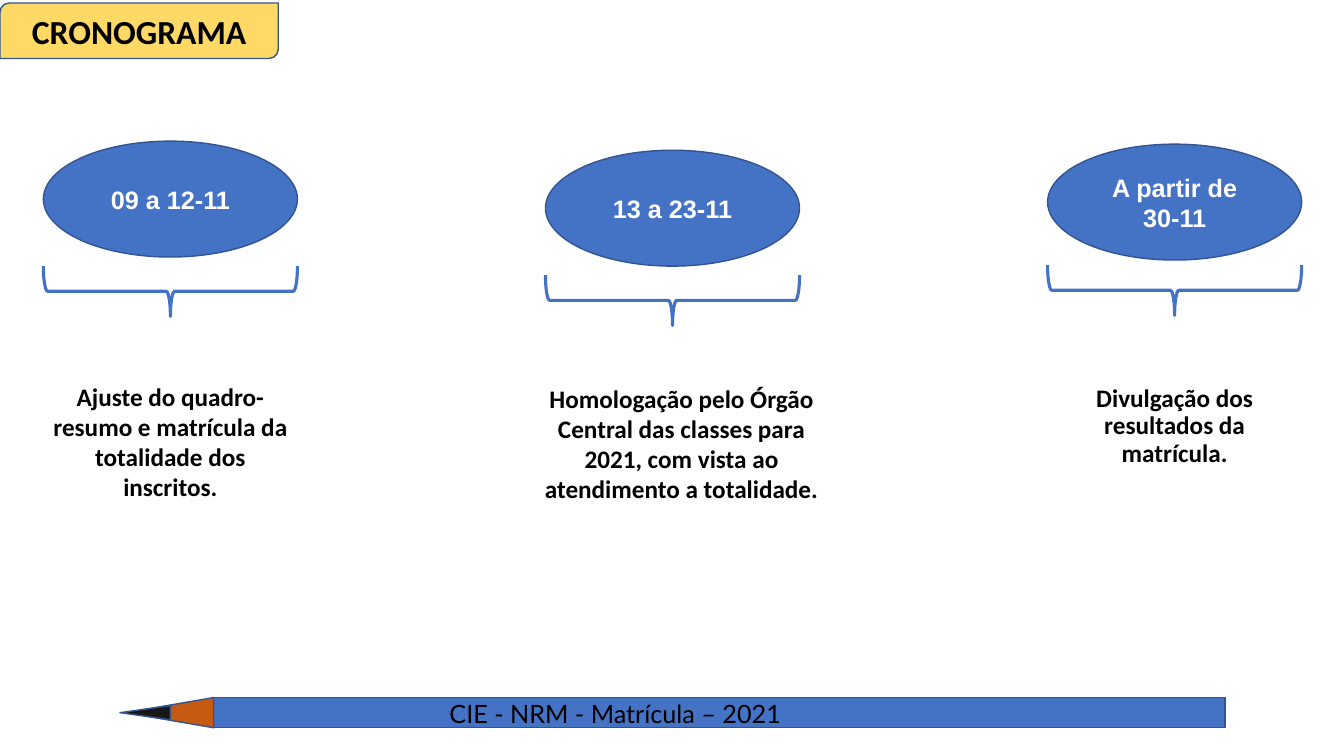
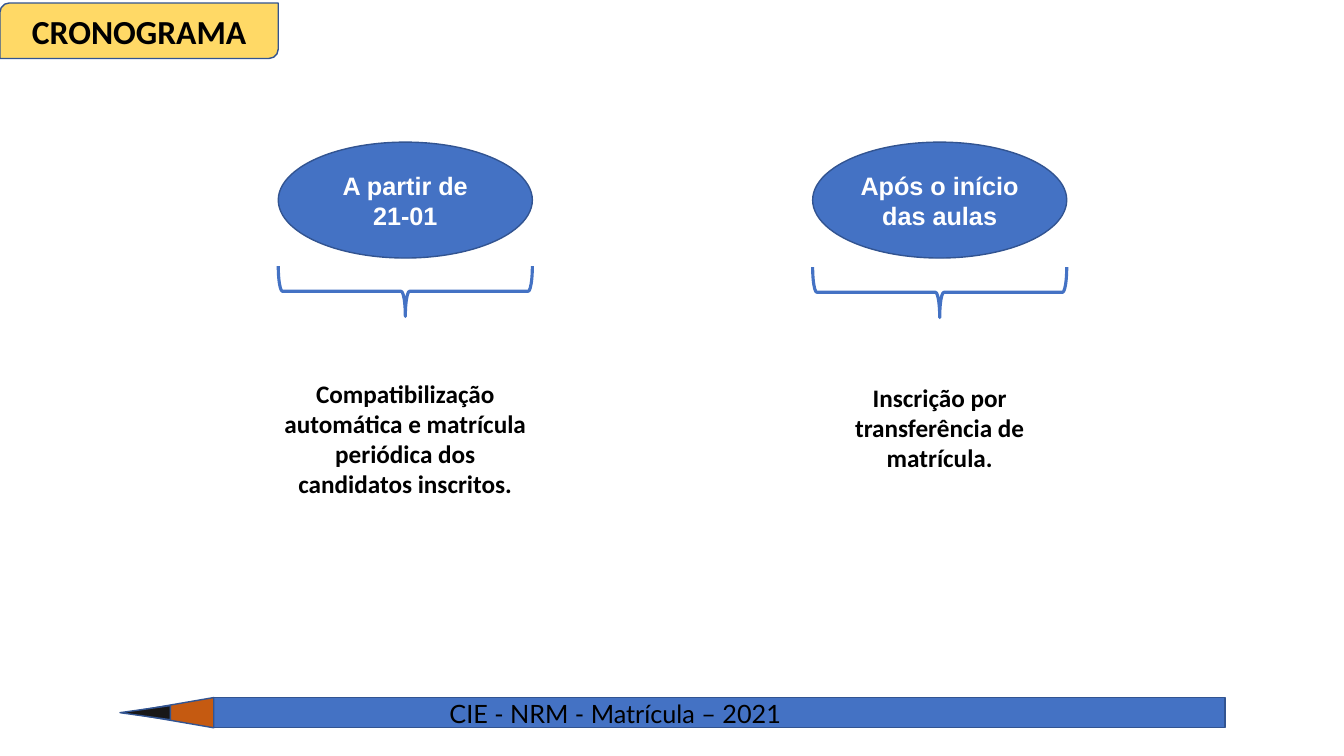
from pptx import Presentation
from pptx.dml.color import RGBColor
from pptx.enum.shapes import MSO_SHAPE
from pptx.enum.text import MSO_ANCHOR, PP_ALIGN
from pptx.util import Inches, Pt

BLUE, EDGE, GOLD = "4472C4", "325491", "FFD966"
WOOD, LEAD, BLACK, WHITE = "C55A11", "181717", "000000", "FFFFFF"
OVAL_W, OVAL_H = 2.52, 1.15
BRACE_H = 0.5


def color(code):
    return RGBColor.from_string(code)


class Deck:
    """Holds the style and the current slide."""

    def __init__(self):
        self.prs = Presentation()
        self.prs.slide_width = Inches(13.33)
        self.prs.slide_height = Inches(7.5)
        self.slide = None

    def start(self, title):
        self.slide = self.prs.slides.add_slide(self.prs.slide_layouts[5])
        self.pencil()
        self.title(title)
        self.text(4.36, 6.88, 6.5, 0.4, "CIE - NRM - Matrícula – 2021",
                  font="Lato", bold=False, align=PP_ALIGN.LEFT)

    def shape(self, kind, x, y, w, h, fill=None, line=EDGE, weight=1, turn=0, home=None):
        """Draw a shape; x, y, w, h is the box seen after a quarter turn."""
        if turn:
            x, y, w, h = x + (w - h) / 2, y + (h - w) / 2, h, w
        shapes = (home or self.slide).shapes
        item = shapes.add_shape(kind, Inches(x), Inches(y), Inches(w), Inches(h))
        item.rotation = turn
        item.shadow.inherit = False
        if fill:
            item.fill.solid()
            item.fill.fore_color.rgb = color(fill)
        else:
            item.fill.background()
        item.line.color.rgb = color(line)
        item.line.width = Pt(weight)
        return item

    def label(self, item, words, font="Calibri", size=18, ink=BLACK, bold=True,
              align=PP_ALIGN.CENTER, anchor=MSO_ANCHOR.MIDDLE, space=1.0):
        frame = item.text_frame
        frame.text = words
        frame.word_wrap = True
        frame.vertical_anchor = anchor
        para = frame.paragraphs[0]
        para.alignment = align
        para.line_spacing = space
        para.font.name = font
        para.font.size = Pt(size)
        para.font.bold = bold
        para.font.color.rgb = color(ink)

    def text(self, x, y, w, h, words, **style):
        box = self.slide.shapes.add_textbox(Inches(x), Inches(y), Inches(w), Inches(h))
        self.label(box, words, anchor=MSO_ANCHOR.TOP, **style)

    def title(self, words):
        box = (0, 0.03, 2.76, 0.55)
        self.shape(MSO_SHAPE.ROUND_2_DIAG_RECTANGLE, *box, fill=GOLD)
        title = self.slide.shapes.title
        title.left, title.top, title.width, title.height = map(Inches, box)
        self.label(title, words, size=24)
        # Bring the title in front of its tab
        self.slide.shapes._spTree.append(title._element)

    def pencil(self):
        group = self.slide.shapes.add_group_shape()
        tip = MSO_SHAPE.ISOSCELES_TRIANGLE
        self.shape(MSO_SHAPE.RECTANGLE, 2.12, 6.92, 10.03, 0.3, BLUE, home=group)
        self.shape(tip, 1.25, 6.92, 0.87, 0.3, WOOD, turn=270, home=group)
        self.shape(tip, 1.19, 7, 0.5, 0.14, LEAD, turn=270, home=group)

    def step(self, x, y, date, brace):
        """Draw a date oval with the brace below it."""
        oval = self.shape(MSO_SHAPE.FLOWCHART_CONNECTOR, x, y, OVAL_W, OVAL_H, BLUE)
        self.label(oval, date, font="Arial", ink=WHITE)
        self.shape(MSO_SHAPE.RIGHT_BRACE, x, brace, OVAL_W, BRACE_H,
                   line=BLUE, weight=2.25, turn=90)


# Each slide: first oval's left, pitch, and its steps as
# (oval top, date, brace top, text box, text, line spacing)
SLIDES = [
    (0.43, 4.98, [
        (1.4, "09 a 12-11", 2.64, (0.43, 3.73, 2.52, 1.31),
         "Ajuste do quadro-resumo e matrícula da totalidade dos inscritos.", 1.0),
        (1.49, "13 a 23-11", 2.73, (5.13, 3.75, 3.26, 1.31),
         "Homologação pelo Órgão Central das classes para 2021, "
         "com vista ao atendimento a totalidade.", 1.0),
        (1.43, "A partir de 30-11", 2.63, (10.39, 3.78, 2.52, 1.26),
         "Divulgação dos resultados da matrícula.", 0.9),
    ]),
    (2.76, 5.3, [
        (1.41, "A partir de 21-01", 2.64, (2.64, 3.7, 2.76, 1.31),
         "Compatibilização automática e matrícula periódica "
         "dos candidatos inscritos.", 1.0),
        (1.41, "Após o início das aulas", 2.65, (8.06, 3.74, 2.52, 1.01),
         "Inscrição por transferência de matrícula.", 1.0),
    ]),
]


def main():
    deck = Deck()
    for left, pitch, steps in SLIDES:
        deck.start("CRONOGRAMA")
        for i, (top, date, brace, box, words, space) in enumerate(steps):
            deck.step(left + i * pitch, top, date, brace)
            deck.text(*box, words, space=space)
    deck.prs.save("out.pptx")


if __name__ == "__main__":
    main()
